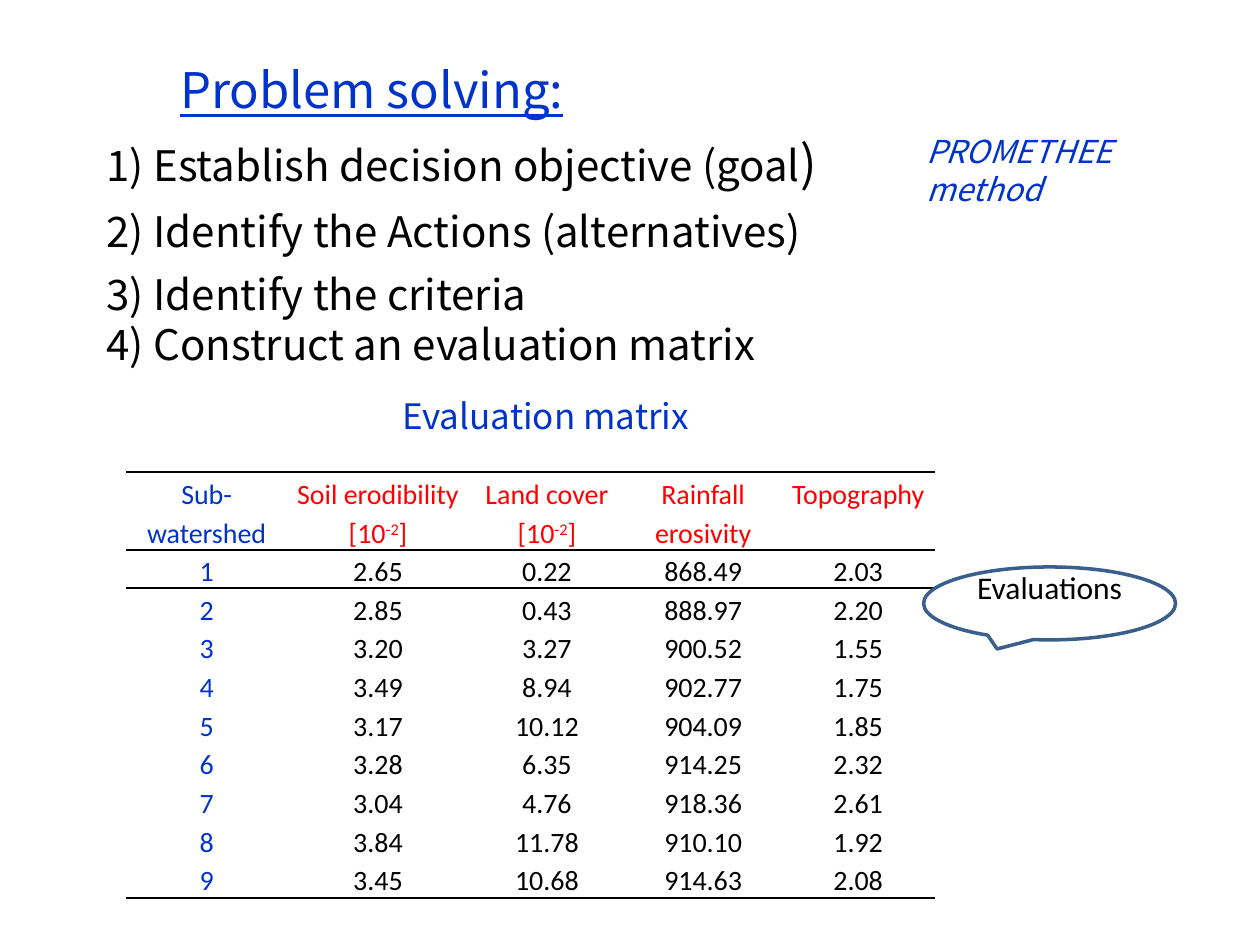
"""Build the slide on problem solving with its evaluation matrix."""
from dataclasses import dataclass

from lxml.etree import SubElement
from pptx import Presentation
from pptx.dml.color import RGBColor as Color
from pptx.enum.shapes import MSO_SHAPE as Preset
from pptx.enum.text import MSO_ANCHOR as Anchor, MSO_AUTO_SIZE as AutoSize, PP_ALIGN as Align
from pptx.oxml.ns import qn
from pptx.util import Cm, Pt


@dataclass(frozen=True)
class Theme:
    heading_font: str = "Noto Sans CJK KR"
    body_font: str = "Calibri"
    black: str = "000000"
    blue: str = "0033CC"
    red: str = "FF0000"
    outline: str = "3A5F8C"
    title: int = 28
    step: int = 24
    caption: int = 20
    note: int = 18
    cell: int = 16
    rule: float = 1.5


THEME = Theme()
NO_TABLE_STYLE = "{2D5ABB26-0587-4C30-8999-92F81FD0307C}"

TITLE = ("Problem solving:", (3.38, 1.07, 8.69, 1.45))
STEPS = [
    (["1) Establish decision objective (goal)"], (1.9, 2.54, 19.05, 1.45)),
    (["2) Identify the Actions (alternatives)"], (1.9, 4.01, 22.86, 1.27)),
    (["3) Identify the criteria", "4) Construct an evaluation matrix"], (1.9, 5.28, 19.68, 2.31)),
]
CAPTION = ("Evaluation matrix", (2.11, 7.82, 17.78, 1.12))
METHOD = ("PROMETHEE method", (18.42, 2.54, 5.97, 1.02))
CALLOUT = ("Evaluations", (18.62, 11.43, 5.08, 1.47))

TABLE_ORIGIN = (2.54, 9.52)
COLUMN_WIDTHS = [3.25, 3.66, 3.15, 3.15, 3.1]
HEADER_HEIGHT, ROW_HEIGHT = 1.56, 0.78
UNIT = ("[10", "-2", "]")
HEADERS = [
    [("Sub-watershed",)],
    [("Soil erodibility",), UNIT],
    [("Land cover",), UNIT],
    [("Rainfall erosivity",)],
    [("Topography",)],
]
EVALUATIONS = [
    ("2.65", "0.22", "868.49", "2.03"),
    ("2.85", "0.43", "888.97", "2.20"),
    ("3.20", "3.27", "900.52", "1.55"),
    ("3.49", "8.94", "902.77", "1.75"),
    ("3.17", "10.12", "904.09", "1.85"),
    ("3.28", "6.35", "914.25", "2.32"),
    ("3.04", "4.76", "918.36", "2.61"),
    ("3.84", "11.78", "910.10", "1.92"),
    ("3.45", "10.68", "914.63", "2.08"),
]


def format_run(run, size, color, font_name=THEME.heading_font):
    run.font.name = font_name
    run.font.size = Pt(size)
    run.font.color.rgb = Color.from_string(color)


def fill_frame(frame, lines, size, color, align=Align.LEFT, font_name=THEME.heading_font):
    frame.word_wrap = True
    frame.text = "\n".join(lines)
    for paragraph in frame.paragraphs:
        paragraph.alignment = align
        for run in paragraph.runs:
            format_run(run, size, color, font_name)


def add_text(slide, lines, box, size, color, align=Align.LEFT):
    frame = slide.shapes.add_textbox(*map(Cm, box)).text_frame
    fill_frame(frame, lines, size, color, align)
    frame.auto_size = AutoSize.SHAPE_TO_FIT_TEXT
    return frame


def add_title(slide):
    text, box = TITLE
    title = slide.shapes.title
    title.left, title.top, title.width, title.height = map(Cm, box)
    frame = title.text_frame
    fill_frame(frame, [text], THEME.title, THEME.blue)
    frame.vertical_anchor = Anchor.TOP
    frame.auto_size = AutoSize.NONE
    frame.paragraphs[0].runs[0].font.underline = True


def add_steps(slide):
    frames = [add_text(slide, lines, box, THEME.step, THEME.black) for lines, box in STEPS]
    goal = frames[0].paragraphs[0]
    first = goal.runs[0]
    first.text = first.text[:-1]
    bracket = goal.add_run()
    bracket.text = ")"
    format_run(bracket, THEME.title, THEME.black)


def set_rules(cell, sides):
    properties = cell._tc.get_or_add_tcPr()
    for position, side in enumerate(sides):
        line = SubElement(properties, qn(f"a:{side}"), w=str(Pt(THEME.rule)))
        fill = SubElement(line, qn("a:solidFill"))
        SubElement(fill, qn("a:srgbClr"), val=THEME.black)
        properties.insert(position, line)


def fill_cell(cell, lines, color):
    cell.fill.background()
    cell.margin_left = cell.margin_right = Cm(0.18)
    cell.margin_top = cell.margin_bottom = 0
    frame = cell.text_frame
    for index, parts in enumerate(lines):
        paragraph = frame.add_paragraph() if index else frame.paragraphs[0]
        paragraph.alignment = Align.CENTER
        paragraph.line_spacing = 1.15
        for part in parts:
            run = paragraph.add_run()
            run.text = part
            format_run(run, THEME.cell, color, THEME.body_font)
            if part == UNIT[1]:
                run.font._element.set("baseline", "30000")


def add_matrix(slide):
    rows = [HEADERS] + [
        [[(text,)] for text in (str(number), *values)]
        for number, values in enumerate(EVALUATIONS, 1)
    ]
    heights = [HEADER_HEIGHT] + [ROW_HEIGHT] * len(EVALUATIONS)
    size = (sum(COLUMN_WIDTHS), sum(heights))
    table = slide.shapes.add_table(
        len(rows), len(HEADERS), *map(Cm, TABLE_ORIGIN + size)).table
    table.first_row = table.horz_banding = False
    table._tbl.tblPr.find(qn("a:tableStyleId")).text = NO_TABLE_STYLE
    for column, width in zip(table.columns, COLUMN_WIDTHS):
        column.width = Cm(width)
    rules = {0: ("lnT", "lnB"), 1: ("lnT",), len(rows) - 1: ("lnB",)}
    for row_index, (row, height) in enumerate(zip(rows, heights)):
        table.rows[row_index].height = Cm(height)
        for column_index, lines in enumerate(row):
            value_color = THEME.black if row_index else THEME.red
            cell = table.cell(row_index, column_index)
            fill_cell(cell, lines, value_color if column_index else THEME.blue)
            set_rules(cell, rules.get(row_index, ()))


def add_callout(slide):
    text, box = CALLOUT
    shape = slide.shapes.add_shape(Preset.OVAL_CALLOUT, *map(Cm, box))
    shape.shadow.inherit = False
    shape.fill.background()
    shape.line.color.rgb = Color.from_string(THEME.outline)
    shape.line.width = Pt(2)
    frame = shape.text_frame
    fill_frame(frame, [text], THEME.note, THEME.black, Align.CENTER, THEME.body_font)
    frame.vertical_anchor = Anchor.MIDDLE
    frame.margin_top, frame.margin_bottom = 0, Cm(0.66)


def main():
    presentation = Presentation()
    presentation.slide_width, presentation.slide_height = Cm(25.4), Cm(19.05)
    slide = presentation.slides.add_slide(presentation.slide_layouts[5])
    add_title(slide)
    add_steps(slide)
    caption, caption_box = CAPTION
    add_text(slide, [caption], caption_box, THEME.caption, THEME.blue, Align.CENTER)
    add_matrix(slide)
    add_callout(slide)
    method, method_box = METHOD
    frame = add_text(slide, [method], method_box, THEME.note, THEME.blue)
    frame.paragraphs[0].runs[0].font.italic = True
    presentation.save("out.pptx")


if __name__ == "__main__":
    main()
